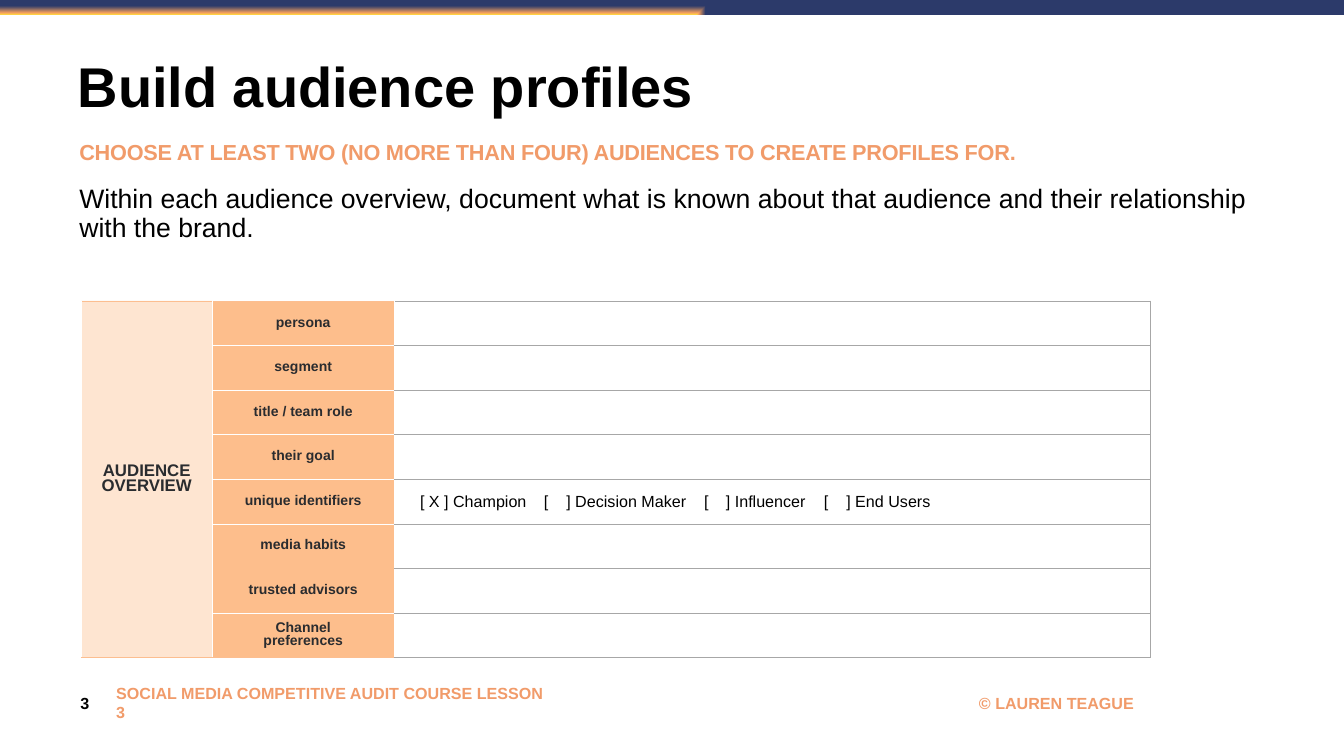
"""Builds the audience profile worksheet slide."""
import pptx
import pptx.dml.color
import pptx.enum.shapes
import pptx.enum.text
import pptx.oxml
import pptx.oxml.ns
import pptx.util

Pt = pptx.util.Pt
ALIGN = pptx.enum.text.PP_ALIGN
ANCHOR = pptx.enum.text.MSO_ANCHOR
COLORS = {
    "black": "000000", "dark": "2A2C2F", "coral": "F19B6A",
    "peach": "FDBE8C", "edge": "FCBE90", "white": "FFFFFF",
    "grey": "A7A7A7", "gold": "FFD840", "amber": "F7A05D", "navy": "2C3A6A",
}
NS = 'xmlns:a="http://schemas.openxmlformats.org/drawingml/2006/main"'
LABELS = ["persona", "segment", "title / team role", "their goal",
          "unique identifiers", "media habits", "trusted advisors",
          "Channel\npreferences"]
ROLES = "[ X ] Champion\t[\t] Decision Maker\t[\t] Influencer\t[\t] End Users"
STOPS = [177, 209, 406, 437, 577, 609]


def rgb(name):
    """Return the named colour."""
    return pptx.dml.color.RGBColor.from_string(COLORS[name])


def write(para, text, size, color="black", bold=False, align=ALIGN.LEFT,
          line=1.0, before=0, track=0, tabs=()):
    """Fill a paragraph with formatted text."""
    if tabs:
        stops = "".join(f'<a:tab pos="{Pt(t)}" algn="l"/>' for t in tabs)
        para._p.get_or_add_pPr().append(
            pptx.oxml.parse_xml(f"<a:tabLst {NS}>{stops}</a:tabLst>"))
    para.text = text
    para.alignment = align
    para.line_spacing = line
    para.space_before = Pt(before)
    for run in para.runs:
        font = run.font
        font.name, font.size, font.bold = "Arial", Pt(size), bold
        font.color.rgb = rgb(color)
        if track:
            run._r.get_or_add_rPr().set("spc", str(round(track * 100)))


def pad(item, gap):
    """Set equal margins on a frame or cell."""
    item.margin_left = item.margin_right = Pt(gap)
    item.margin_top = item.margin_bottom = Pt(gap)


def box(slide, left, top, width, height, gap=6, anchor=ANCHOR.MIDDLE):
    """Add a wrapping text box and return its frame."""
    shape = slide.shapes.add_textbox(Pt(left), Pt(top), Pt(width), Pt(height))
    frame = shape.text_frame
    frame.word_wrap = True
    frame.vertical_anchor = anchor
    pad(frame, gap)
    return frame


def banner(slide):
    """Add the gradient strip along the top edge."""
    shape = slide.shapes.add_shape(
        pptx.enum.shapes.MSO_SHAPE.RECTANGLE, Pt(-6.5), Pt(-6), Pt(1932.5), Pt(27.4))
    shape.shadow.inherit = False
    shape.line.fill.background()
    stops = "".join(
        f'<a:gs pos="{pos * 1000}"><a:srgbClr val="{COLORS[name]}"/></a:gs>'
        for pos, name in [(0, "gold"), (20, "amber"), (93, "navy")])
    fill = pptx.oxml.parse_xml(
        f'<a:gradFill {NS} rotWithShape="1"><a:gsLst>{stops}</a:gsLst>'
        '<a:path path="rect"><a:fillToRect l="6000" t="99000" r="94000" '
        'b="1000"/></a:path></a:gradFill>')
    shape._element.spPr.find(pptx.oxml.ns.qn("a:prstGeom")).addnext(fill)


def fade(share):
    """Return the alpha element for a percentage."""
    return f'<a:alpha {NS} val="{share * 1000}"/>'


def paint(cell, name, share=100):
    """Fill a cell with a colour at a given opacity."""
    cell.fill.solid()
    cell.fill.fore_color.rgb = rgb(name)
    if share < 100:
        for tint in cell._tc.tcPr.iter(pptx.oxml.ns.qn("a:srgbClr")):
            tint.append(pptx.oxml.parse_xml(fade(share)))


def edge(cell, left, right, top, bottom, share=100):
    """Draw the four borders of a cell, with None for no line."""
    sides = {"L": (left, 100), "R": (right, 100),
             "T": (top, share), "B": (bottom, share)}
    for spot, (side, (name, alpha)) in enumerate(sides.items()):
        ink = "<a:noFill/>"
        if name:
            ink = (f'<a:solidFill><a:srgbClr val="{COLORS[name]}">'
                   f"{fade(alpha)}</a:srgbClr></a:solidFill>")
        cell._tc.get_or_add_tcPr().insert(spot, pptx.oxml.parse_xml(
            f'<a:ln{side} {NS} w="{Pt(1)}">{ink}</a:ln{side}>'))


def grid(slide):
    """Add the audience overview table."""
    count, high, widths = len(LABELS), 63.72, [187.2, 260, 1080]
    table = slide.shapes.add_table(
        count, 3, Pt(116), Pt(430), Pt(sum(widths)), Pt(high * count)).table
    table.first_row = table.horz_banding = False
    for col, width in zip(table.columns, widths):
        col.width = Pt(width)
    for row, label in enumerate(LABELS):
        table.rows[row].height = Pt(high)
        head, name, blank = (table.cell(row, col) for col in range(3))
        for cell in (head, name, blank):
            pad(cell, 4.5)
            cell.vertical_anchor = ANCHOR.MIDDLE
        paint(head, "peach", 40)
        edge(head, "white", "white", "edge", "edge", 40)
        paint(name, "peach")
        top = "edge" if row == 0 else "white"
        low = "edge" if row == count - 1 else "white"
        edge(name, "white", "white",
             None if label == "trusted advisors" else top,
             None if label == "media habits" else low)
        write(name.text_frame.paragraphs[0], label, 20, color="dark",
              bold=True, align=ALIGN.CENTER, line=0.8)
        blank.fill.background()
        edge(blank, "white", "grey", "grey", "grey")
    first = table.cell(0, 0)
    first.merge(table.cell(count - 1, 0))
    write(first.text_frame.paragraphs[0], "AUDIENCE OVERVIEW", 24,
          color="dark", bold=True, align=ALIGN.CENTER, line=0.8)


def main():
    """Build and save the slide."""
    deck = pptx.Presentation()
    deck.slide_width, deck.slide_height = Pt(1920), Pt(1080)
    slide = deck.slides.add_slide(deck.slide_layouts[6])
    banner(slide)
    for text, left, width, color in [
            ("SOCIAL MEDIA COMPETITIVE AUDIT COURSE LESSON 3", 160, 641.5, "coral"),
            ("© LAUREN TEAGUE", 1392.5, 240, "coral"),
            ("3", 108.7, 52.5, "black")]:
        frame = box(slide, left, 985, width, 37.5)
        write(frame.paragraphs[0], text, 23, color=color, bold=True)
    title = box(slide, 107.3, 88, 1745, 119.5, gap=3.6, anchor=ANCHOR.TOP)
    write(title.paragraphs[0], "Build audience profiles", 80, bold=True, line=0.8)
    body = box(slide, 107.3, 196, 1698, 246, anchor=ANCHOR.TOP)
    write(body.paragraphs[0],
          "CHOOSE AT LEAST TWO (NO MORE THAN FOUR) AUDIENCES TO CREATE PROFILES FOR.",
          31, color="coral", bold=True, line=0.9, track=-0.3)
    write(body.add_paragraph(),
          "Within each audience overview, document what is known about that "
          "audience and their relationship with the brand.",
          38, line=0.9, before=30)
    grid(slide)
    roles = box(slide, 594, 697.7, 771, 37.5)
    write(roles.paragraphs[0], ROLES, 23, tabs=STOPS)
    deck.save("out.pptx")


if __name__ == "__main__":
    main()
